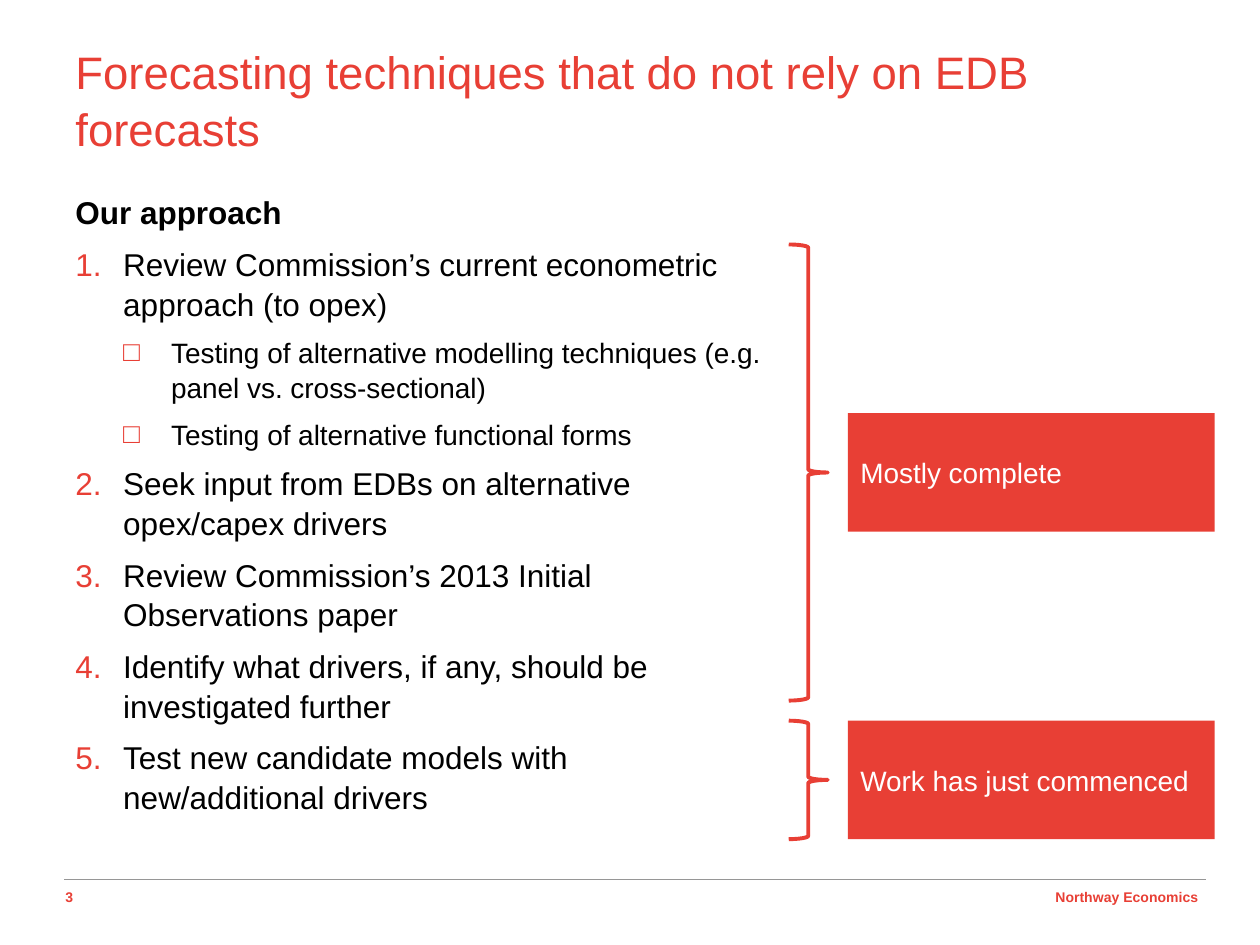
"""Build the slide on forecasting techniques that do not rely on EDB forecasts."""
from dataclasses import dataclass
from typing import Any, Optional

from lxml import etree
from pptx import Presentation
from pptx import util as u
from pptx.dml.color import RGBColor
from pptx.enum import shapes, text
from pptx.oxml.ns import qn

RED = RGBColor(0xE8, 0x3F, 0x35)
GREY = RGBColor(0x96, 0x96, 0x96)
BLACK = RGBColor(0x00, 0x00, 0x00)
WHITE = RGBColor(0xFF, 0xFF, 0xFF)
FONT = "Arial"
INDENT = 27.36
LINE_SPACING = 1.05


@dataclass(frozen=True)
class Box:
    left: float
    top: float
    width: float
    height: float

    def lengths(self) -> tuple:
        return tuple(u.Pt(side) for side in (self.left, self.top, self.width, self.height))


@dataclass(frozen=True)
class Item:
    wording: str
    level: int = 0
    bullet: Optional[str] = "number"


@dataclass(frozen=True)
class Status:
    wording: str
    box_top: float
    brace_top: float
    brace_height: float


ITEMS = (
    Item("Our approach", bullet=None),
    Item("Review Commission’s current econometric approach (to opex)"),
    Item("Testing of alternative modelling techniques (e.g. panel vs. cross-sectional)", 1, "□"),
    Item("Testing of alternative functional forms", 1, "□"),
    Item("Seek input from EDBs on alternative opex/capex drivers"),
    Item("Review Commission’s 2013 Initial Observations paper"),
    Item("Identify what drivers, if any, should be investigated further"),
    Item("Test new candidate models with new/additional drivers"),
)
STATUSES = (
    Status("Mostly complete", 236.16, 139.68, 260.64),
    Status("Work has just commenced", 411.84, 411.84, 67.68),
)


def write(paragraph: Any, wording: str, *, size: float, color: RGBColor = BLACK,
          bold: bool = False, align: Any = text.PP_ALIGN.LEFT,
          spacing: float = 0, line_spacing: float = 1.0) -> None:
    """Put formatted wording in a paragraph."""
    paragraph.alignment = align
    paragraph.line_spacing = line_spacing
    paragraph.space_before = paragraph.space_after = u.Pt(spacing)
    run = paragraph.add_run()
    run.text = wording
    run.font.name, run.font.size, run.font.bold = FONT, u.Pt(size), bold
    run.font.color.rgb = color


def add_bullet(paragraph: Any, item: Item) -> None:
    """Give a paragraph its hanging indent and red marker."""
    properties = paragraph._p.get_or_add_pPr()
    properties.set("marL", str(u.Pt(INDENT * (item.level + 1))))
    properties.set("indent", str(-u.Pt(INDENT)))
    if item.bullet is None:
        etree.SubElement(properties, qn("a:buNone"))
        return
    color = etree.SubElement(properties, qn("a:buClr"))
    etree.SubElement(color, qn("a:srgbClr"), val=str(RED))
    etree.SubElement(properties, qn("a:buFont"), typeface=FONT)
    if item.bullet == "number":
        etree.SubElement(properties, qn("a:buAutoNum"), type="arabicPeriod")
    else:
        etree.SubElement(properties, qn("a:buChar"), char=item.bullet)


def add_frame(slide: Any, box: Box) -> Any:
    """Add a wrapping text box and return its text frame."""
    frame = slide.shapes.add_textbox(*box.lengths()).text_frame
    frame.word_wrap = True
    return frame


def add_approach(slide: Any, items: tuple[Item, ...]) -> None:
    """Add the heading and the numbered steps."""
    frame = add_frame(slide, Box(36, 105.84, 414.72, 396.72))
    for index, item in enumerate(items):
        paragraph = frame.add_paragraph() if index else frame.paragraphs[0]
        paragraph.level = item.level
        write(paragraph, item.wording, size=16 if item.level else 18,
              bold=item.bullet is None, spacing=3.2 if item.level else 3.4,
              line_spacing=LINE_SPACING)
        add_bullet(paragraph, item)


def add_preset(slide: Any, kind: Any, box: Box, fill: RGBColor) -> Any:
    """Add a filled preset shape without a shadow."""
    shape = slide.shapes.add_shape(kind, *box.lengths())
    shape.shadow.inherit = False
    shape.fill.solid()
    shape.fill.fore_color.rgb = fill
    return shape


def add_status(slide: Any, status: Status) -> None:
    """Add a status box and the brace that points to it."""
    label = add_preset(slide, shapes.MSO_SHAPE.RECTANGLE,
                       Box(484.56, status.box_top, 209.52, 67.68), RED)
    label.line.fill.background()
    label.text_frame.word_wrap = True
    label.text_frame.vertical_anchor = text.MSO_ANCHOR.MIDDLE
    write(label.text_frame.paragraphs[0], status.wording, size=16, color=WHITE, spacing=3.2)
    brace = add_preset(slide, shapes.MSO_SHAPE.RIGHT_BRACE,
                       Box(450.72, status.brace_top, 22.32, status.brace_height), WHITE)
    brace.line.color.rgb = RED
    brace.line.width = u.Pt(2.25)


def add_footer(slide: Any) -> None:
    """Add the rule, the page number and the firm name."""
    rule = slide.shapes.add_connector(shapes.MSO_CONNECTOR.STRAIGHT, u.Pt(36.72),
                                      u.Pt(502.56), u.Pt(689.04), u.Pt(502.56))
    rule.line.color.rgb = GREY
    rule.line.width = u.Pt(0.75)
    etree.SubElement(rule._element.spPr, qn("a:effectLst"))
    number = add_frame(slide, Box(30.24, 504, 26.64, 18))
    write(number.paragraphs[0], "3", size=8, color=RED, bold=True)
    firm = add_frame(slide, Box(518.4, 504, 173.5, 16.56))
    write(firm.paragraphs[0], "Northway Economics", size=8, color=RED, bold=True,
          align=text.PP_ALIGN.RIGHT)


def main() -> None:
    """Build and save the presentation."""
    presentation = Presentation()
    presentation.slide_width, presentation.slide_height = u.Pt(720), u.Pt(540)
    slide = presentation.slides.add_slide(presentation.slide_layouts[6])
    add_footer(slide)
    title = add_frame(slide, Box(36, 20.16, 653.76, 54))
    write(title.paragraphs[0], "Forecasting techniques that do not rely on EDB forecasts",
          size=26, color=RED, line_spacing=LINE_SPACING)
    add_approach(slide, ITEMS)
    for status in STATUSES:
        add_status(slide, status)
    presentation.save("out.pptx")


if __name__ == "__main__":
    main()
